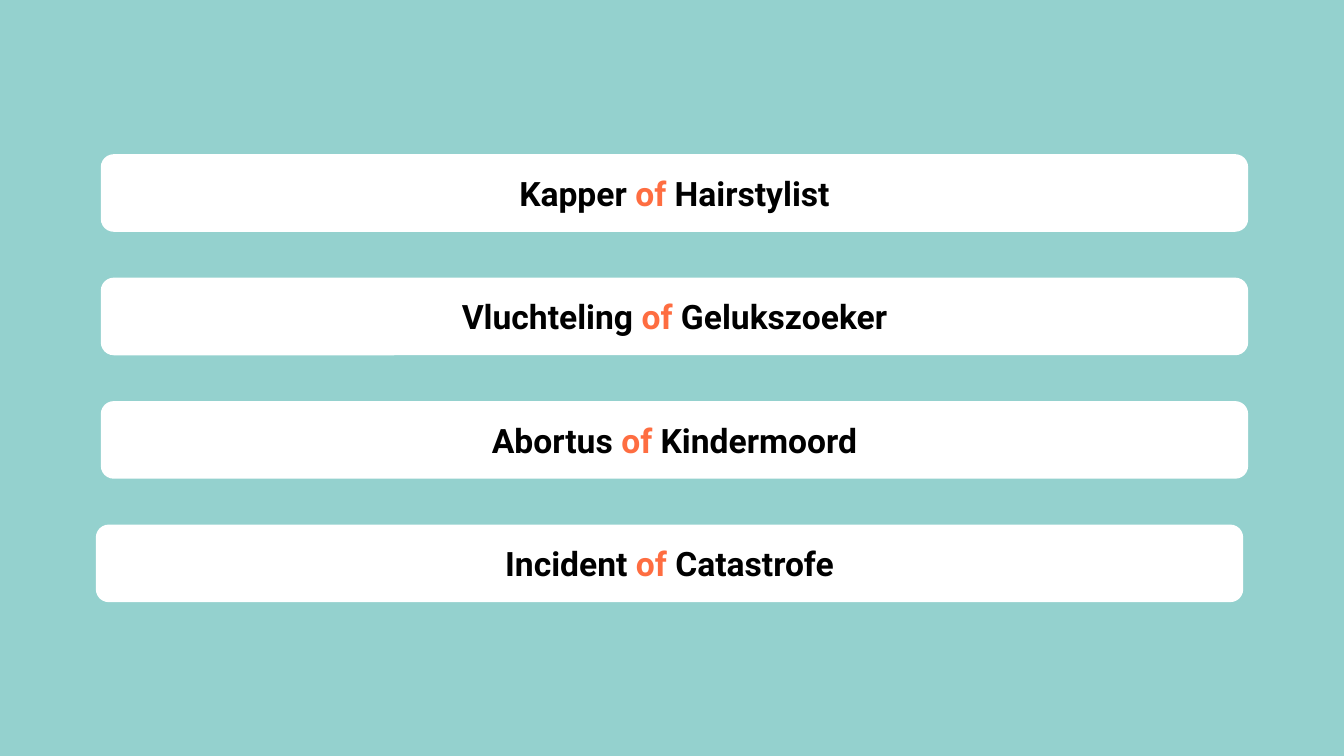
from dataclasses import dataclass

from pptx import Presentation
from pptx.dml.color import RGBColor
from pptx.enum.shapes import MSO_SHAPE
from pptx.enum.text import MSO_ANCHOR, PP_ALIGN
from pptx.util import Inches, Pt

ROUNDED = MSO_SHAPE.ROUNDED_RECTANGLE
CENTER = PP_ALIGN.CENTER
MIDDLE = MSO_ANCHOR.MIDDLE


@dataclass(frozen=True)
class Theme:
    background: RGBColor = RGBColor(0x94, 0xD1, 0xCE)
    bar: RGBColor = RGBColor(0xFF, 0xFF, 0xFF)
    text: RGBColor = RGBColor(0x00, 0x00, 0x00)
    accent: RGBColor = RGBColor(0xFE, 0x6D, 0x41)
    font: str = "Roboto"
    size: Pt = Pt(24)


# Percentages of the slide's width or height
BAR_LEFT = 7.5
LAST_BAR_LEFT = 7.13
BAR_WIDTH = 85.37
FIRST_BAR_TOP = 20.4
BAR_HEIGHT = 10.27
BAR_PITCH = 16.33

WORD_PAIRS = [
    ("Kapper", "Hairstylist"),
    ("Vluchteling", "Gelukszoeker"),
    ("Abortus", "Kindermoord"),
    ("Incident", "Catastrofe"),
]


class SlideBuilder:
    def __init__(self, presentation, theme):
        self.theme = theme
        self.width = presentation.slide_width
        self.height = presentation.slide_height
        self.slide = presentation.slides.add_slide(presentation.slide_layouts[6])

    def paint_background(self):
        fill = self.slide.background.fill
        fill.solid()
        fill.fore_color.rgb = self.theme.background

    def across(self, percent):
        return round(self.width * percent / 100)

    def down(self, percent):
        return round(self.height * percent / 100)

    def add_bar(self, left, top, width, height):
        shape = self.slide.shapes.add_shape(
            ROUNDED, self.across(left), self.down(top),
            self.across(width), self.down(height))
        shape.shadow.inherit = False
        shape.fill.solid()
        shape.fill.fore_color.rgb = self.theme.bar
        shape.line.fill.background()
        return shape

    def write_choice(self, shape, first, second):
        """Write "first of second" with the joining word in the accent colour."""
        shape.text_frame.vertical_anchor = MIDDLE
        paragraph = shape.text_frame.paragraphs[0]
        paragraph.alignment = CENTER
        parts = [
            (f"{first} ", self.theme.text),
            ("of", self.theme.accent),
            (f" {second}", self.theme.text),
        ]
        for text, color in parts:
            run = paragraph.add_run()
            run.text = text
            run.font.name = self.theme.font
            run.font.size = self.theme.size
            run.font.bold = True
            run.font.color.rgb = color


def main():
    presentation = Presentation()
    presentation.slide_width = Inches(13.33)
    presentation.slide_height = Inches(7.5)
    builder = SlideBuilder(presentation, Theme())
    builder.paint_background()
    lefts = [BAR_LEFT] * (len(WORD_PAIRS) - 1) + [LAST_BAR_LEFT]
    for row, (left, (first, second)) in enumerate(zip(lefts, WORD_PAIRS)):
        top = FIRST_BAR_TOP + row * BAR_PITCH
        bar = builder.add_bar(left, top, BAR_WIDTH, BAR_HEIGHT)
        builder.write_choice(bar, first, second)
    presentation.save("out.pptx")


if __name__ == "__main__":
    main()
